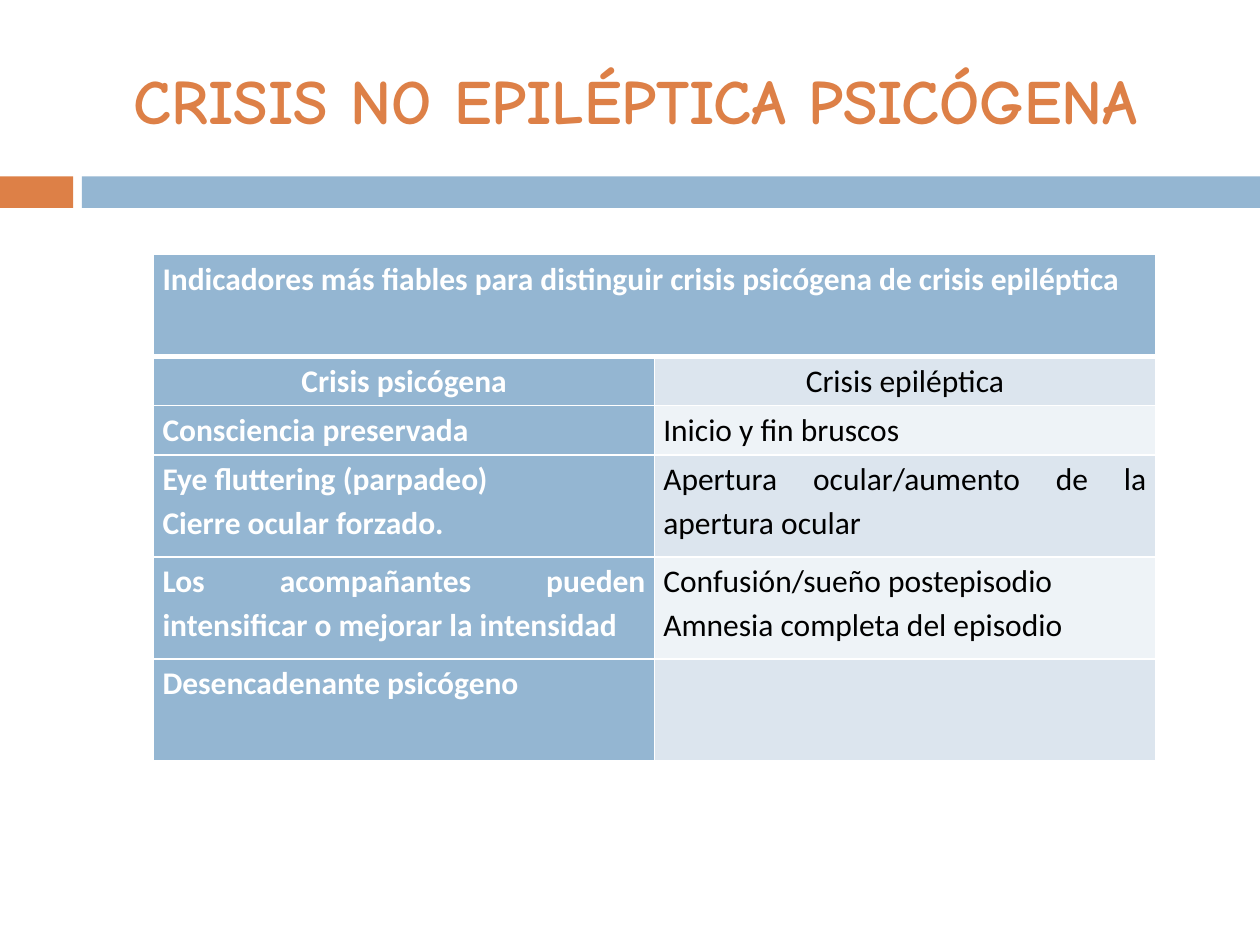
from lxml import etree
from pptx import Presentation
from pptx.dml.color import RGBColor
from pptx.enum.shapes import MSO_SHAPE as Shape
from pptx.enum.text import MSO_ANCHOR as Anchor, PP_ALIGN as Align
from pptx.oxml.ns import qn
from pptx.util import Inches, Pt

COLORS = {
    "orange": "DD8047",
    "blue": "94B6D2",
    "band_dark": "DCE5EE",
    "band_light": "EEF3F7",
    "white": "FFFFFF",
    "black": "000000",
}
TITLE = "CRISIS NO EPILÉPTICA PSICÓGENA"
TABLE_ROWS = [
    ("Indicadores más fiables para distinguir crisis psicógena de crisis epiléptica", ""),
    ("Crisis psicógena", "Crisis epiléptica"),
    ("Consciencia preservada", "Inicio y fin bruscos"),
    ("Eye fluttering (parpadeo)\nCierre ocular forzado.",
     "Apertura ocular/aumento de la apertura ocular"),
    ("Los acompañantes pueden intensificar o mejorar la intensidad",
     "Confusión/sueño postepisodio\nAmnesia completa del episodio"),
    ("Desencadenante psicógeno", ""),
]
TALL, SHORT = 0.81, 0.39
ROW_HEIGHTS = [TALL, SHORT, SHORT, TALL, TALL, TALL]
SUBHEADING_ROW = 1


def rgb(name):
    return RGBColor.from_string(COLORS[name])


def format_font(paragraph, font_name, size, color, bold):
    for run in paragraph.runs:
        run.font.name = font_name
        run.font.size = Pt(size)
        run.font.bold = bold
        run.font.color.rgb = rgb(color)


def add_bar(slide, left, width, color):
    bar = slide.shapes.add_shape(
        Shape.RECTANGLE, Inches(left), Inches(1.4), Inches(width), Inches(0.25))
    bar.shadow.inherit = False
    bar.fill.solid()
    bar.fill.fore_color.rgb = rgb(color)
    bar.line.fill.background()


def add_title(slide):
    box = slide.shapes.add_textbox(
        Inches(0.28), Inches(0.25), Inches(9.53), Inches(1.08))
    frame = box.text_frame
    frame.word_wrap = True
    frame.vertical_anchor = Anchor.MIDDLE
    frame.text = TITLE
    paragraph = frame.paragraphs[0]
    paragraph.alignment = Align.CENTER
    format_font(paragraph, "Comic Neue", 36, "orange", True)


def set_borders(cell, widths):
    """Draw white borders; widths maps a side (L, R, T, B) to points."""
    properties = cell._tc.get_or_add_tcPr()
    for side, width in widths.items():
        line = etree.SubElement(properties, qn(f"a:ln{side}"), w=str(Pt(width)))
        fill = etree.SubElement(line, qn("a:solidFill"))
        etree.SubElement(fill, qn("a:srgbClr"), val=COLORS["white"])


def fill_cell(cell, text, row, column):
    set_borders(cell, {"L": 1, "R": 1,
                       "T": 3 if row == 1 else 1, "B": 3 if row == 0 else 1})
    emphasized = row == 0 or column == 0
    band = "band_dark" if row % 2 else "band_light"
    cell.fill.solid()
    cell.fill.fore_color.rgb = rgb("blue" if emphasized else band)
    cell.margin_left = cell.margin_right = Inches(0.07)
    cell.margin_top = cell.margin_bottom = 0
    cell.text_frame.text = text
    for paragraph in cell.text_frame.paragraphs:
        paragraph.alignment = Align.CENTER if row == SUBHEADING_ROW else Align.JUSTIFY
        paragraph.line_spacing = 1.15
        format_font(paragraph, "Calibri", 18,
                    "white" if emphasized else "black", emphasized)


def add_comparison_table(slide):
    table = slide.shapes.add_table(
        len(TABLE_ROWS), 2, Inches(1.22), Inches(2.02),
        Inches(7.95), Inches(sum(ROW_HEIGHTS))).table
    for row, (texts, height) in enumerate(zip(TABLE_ROWS, ROW_HEIGHTS)):
        table.rows[row].height = Inches(height)
        for column, text in enumerate(texts):
            fill_cell(table.cell(row, column), text, row, column)
    # Last row's empty cell continues the dark band.
    table.cell(0, 0).merge(table.cell(0, 1))


def main():
    presentation = Presentation()
    presentation.slide_width = Inches(10)
    presentation.slide_height = Inches(7.5)
    slide = presentation.slides.add_slide(presentation.slide_layouts[6])
    add_bar(slide, 0, 0.58, "orange")
    add_bar(slide, 0.65, 9.35, "blue")
    add_title(slide)
    add_comparison_table(slide)
    presentation.save("out.pptx")


if __name__ == "__main__":
    main()
